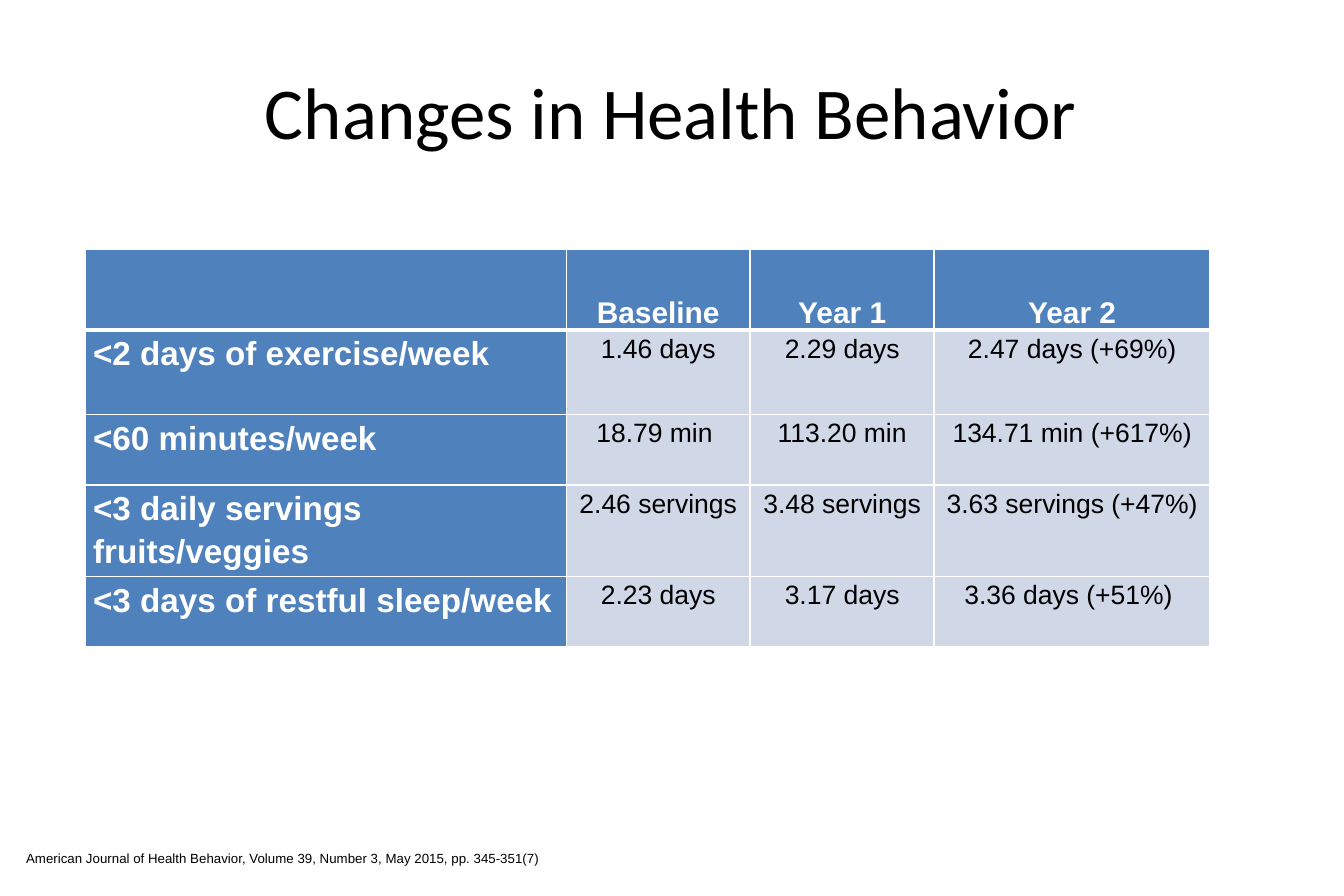
"""Build the slide on changes in health behavior."""
from dataclasses import dataclass

from lxml.etree import SubElement
from pptx import Presentation
from pptx.dml.color import RGBColor
from pptx.enum.text import MSO_ANCHOR as Anchor, MSO_AUTO_SIZE as AutoSize, PP_ALIGN as Align
from pptx.oxml.ns import qn
from pptx.util import Inches, Pt

COLORS = {"white": "FFFFFF", "black": "000000", "blue": "4F81BD", "pale": "D0D8E8"}
COLUMN_WIDTHS = [4.03, 1.54, 1.54, 2.31]
ROW_HEIGHTS = [0.67, 0.71, 0.59, 0.71, 0.59]
ROWS = [
    ["", "Baseline", "Year 1", "Year 2"],
    ["<2 days of exercise/week", "1.46 days", "2.29 days", "2.47 days (+69%)"],
    ["<60 minutes/week", "18.79 min ", "113.20 min", "134.71 min (+617%)"],
    ["<3 daily servings fruits/veggies", "2.46 servings", "3.48 servings", "3.63 servings (+47%)"],
    ["<3 days of restful sleep/week", "2.23 days", "3.17 days", "3.36 days (+51%) "],
]


@dataclass(frozen=True)
class TextStyle:
    size: int
    color: str = "black"
    name: str = "Arial"
    bold: bool = False
    align: Align = Align.CENTER
    spacing: float = 1.0


@dataclass(frozen=True)
class TextBox:
    text: str
    bounds: tuple[float, float, float, float]
    style: TextStyle
    frame: dict


@dataclass(frozen=True)
class CellStyle:
    text: TextStyle
    fill: str
    anchor: Anchor = Anchor.TOP


HEADER = CellStyle(TextStyle(18, "white", bold=True, spacing=1.15), "blue", Anchor.BOTTOM)
LABEL = CellStyle(TextStyle(20, "white", bold=True, align=Align.LEFT, spacing=1.15), "blue")
VALUE = CellStyle(TextStyle(16, spacing=1.15), "pale")

TEXT_BOXES = [
    TextBox("Changes in Health Behavior", (0.56, 0.3, 10.12, 1.25),
            TextStyle(44, name="Calibri"),
            {"word_wrap": True, "vertical_anchor": Anchor.MIDDLE}),
    TextBox("American Journal of Health Behavior, Volume 39, Number 3, May 2015, pp. 345-351(7)",
            (0.12, 7.07, 4.56, 0.24), TextStyle(8, align=Align.LEFT),
            {"word_wrap": False, "auto_size": AutoSize.SHAPE_TO_FIT_TEXT}),
]


def set_attributes(target: object, values: dict) -> None:
    """Set each named value on the target."""
    for name, value in values.items():
        setattr(target, name, value)


def write_text(frame, text: str, style: TextStyle) -> None:
    """Write one styled paragraph into a text frame."""
    paragraph = frame.paragraphs[0]
    set_attributes(paragraph, {"alignment": style.align, "line_spacing": style.spacing})
    if text:
        run = paragraph.add_run()
        run.text = text
        set_attributes(run.font, {"name": style.name, "size": Pt(style.size), "bold": style.bold})
        run.font.color.rgb = RGBColor.from_string(COLORS[style.color])


def add_text_box(slide, box: TextBox) -> None:
    """Add a text box to the slide."""
    frame = slide.shapes.add_textbox(*map(Inches, box.bounds)).text_frame
    set_attributes(frame, box.frame)
    write_text(frame, box.text, box.style)


def add_borders(cell, widths: dict[str, int]) -> None:
    """Draw white cell borders, with widths in points by side."""
    properties = cell._tc.get_or_add_tcPr()
    for side, width in widths.items():
        line = SubElement(properties, qn(f"a:ln{side}"), w=str(Pt(width)))
        fill = SubElement(line, qn("a:solidFill"))
        SubElement(fill, qn("a:srgbClr"), val=COLORS["white"])


def fill_cell(cell, text: str, row: int, column: int) -> None:
    """Style and fill a table cell according to its place."""
    style = HEADER if row == 0 else LABEL if column == 0 else VALUE
    add_borders(cell, {"L": 1, "R": 1, "T": 3 if row == 1 else 1, "B": 3 if row == 0 else 1})
    cell.fill.solid()
    cell.fill.fore_color.rgb = RGBColor.from_string(COLORS[style.fill])
    set_attributes(cell, {
        "margin_left": Inches(0.07), "margin_right": Inches(0.07),
        "margin_top": 0, "margin_bottom": 0, "vertical_anchor": style.anchor,
    })
    write_text(cell.text_frame, text, style.text)


def add_behavior_table(slide) -> None:
    """Add the table of health behaviors by year."""
    bounds = (0.71, 2.09, sum(COLUMN_WIDTHS), sum(ROW_HEIGHTS))
    table = slide.shapes.add_table(
        len(ROWS), len(COLUMN_WIDTHS), *map(Inches, bounds)).table
    set_attributes(table, {"horz_banding": False, "first_col": True})
    for column, width in zip(table.columns, COLUMN_WIDTHS):
        column.width = Inches(width)
    for row, height in zip(table.rows, ROW_HEIGHTS):
        row.height = Inches(height)
    for row_index, texts in enumerate(ROWS):
        for column_index, text in enumerate(texts):
            fill_cell(table.cell(row_index, column_index), text, row_index, column_index)


def main() -> None:
    """Build and save the presentation."""
    presentation = Presentation()
    set_attributes(presentation, {"slide_width": Inches(11.25), "slide_height": Inches(7.5)})
    slide = presentation.slides.add_slide(presentation.slide_layouts[6])
    for box in TEXT_BOXES:
        add_text_box(slide, box)
    add_behavior_table(slide)
    presentation.save("out.pptx")


if __name__ == "__main__":
    main()
